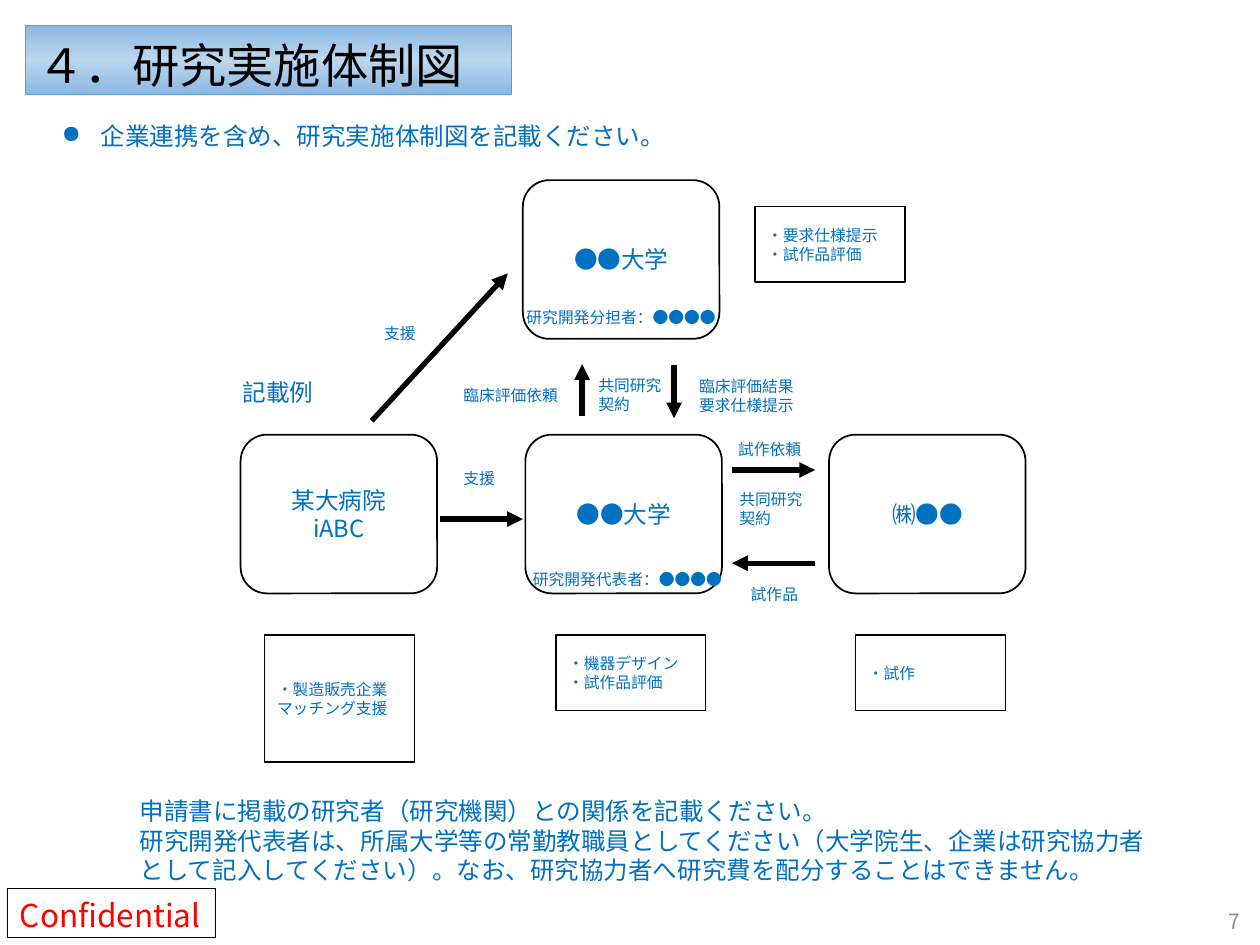
from copy import deepcopy
from lxml.etree import SubElement as Sub
from pptx import Presentation
from pptx.dml.color import RGBColor as Rgb
from pptx.enum.shapes import MSO_CONNECTOR as Conn, MSO_SHAPE as Kind
from pptx.enum.text import MSO_ANCHOR as Anchor, PP_ALIGN as Align
from pptx.oxml.ns import qn
from pptx.util import Inches as In, Pt

THEME = dict(
    font="Noto Sans CJK JP", blue="0070C0", black="000000", white="FFFFFF",
    red="FF0000", gray="8C8C8C", edge="5B9BD5", dark="8BB8E1", light="BCD6EE",
    title=27, stamp=18, body=14, node=13.5, page=12, small=9)

# Grid: node and note columns, node rows, arrow lanes (inches)
COLS = dict(aid=1.91, lead=4.17, firm=6.58, peer=4.15)
ROWS = dict(top=1.43, mid=3.45)
NODE = (1.56, 1.26)
NOTE_W, NOTE_H, NOTE_Y = 1.19, 0.6, 5.04
LANE = (5.81, 6.47)

# Content
TITLE = "４．研究実施体制図"
LEAD = "企業連携を含め、研究実施体制図を記載ください。"
NODES = [
    ("firm", "mid", ["㈱●●"]),
    ("lead", "mid", ["●●大学"]),
    ("aid", "mid", ["某大病院", "iABC"]),
    ("peer", "top", ["●●大学"]),
]
NOTES = [  # left, top, height, lines
    (2.1, NOTE_Y, 1.01, ["・製造販売企業マッチング支援"]),
    (4.41, NOTE_Y, NOTE_H, ["・機器デザイン", "・試作品評価"]),
    (6.79, NOTE_Y, NOTE_H, ["・試作"]),
    (5.99, 1.64, NOTE_H, ["・要求仕様提示", "・試作品評価"]),
]
LABELS = [  # left, top, width, lines
    (4.13, 4.47, 1.72, ["研究開発代表者：●●●●"]),
    (4.08, 2.39, 1.72, ["研究開発分担者：●●●●"]),
    (5.76, 3.44, 0.71, ["試作依頼"]),
    (5.77, 3.84, 0.71, ["共同研究", "契約"]),
    (5.86, 4.59, 0.58, ["試作品"]),
    (3.58, 3.67, 0.45, ["支援"]),
    (2.95, 2.52, 0.45, ["支援"]),
    (3.58, 3.01, 0.96, ["臨床評価依頼"]),
    (4.65, 2.93, 0.71, ["共同研究", "契約"]),
    (5.45, 2.94, 0.96, ["臨床評価結果", "要求仕様提示"]),
]
ARROWS = [  # from x, y, to x, y
    (LANE[0], 3.73, LANE[1], 3.73),
    (LANE[1], 4.47, LANE[0], 4.47),
    (3.49, 4.12, 4.15, 4.12),
    (4.62, 3.3, 4.62, 2.89),
    (5.35, 2.9, 5.35, 3.32),
    (2.95, 3.34, 4.03, 2.17),
]
GUIDE = [
    "申請書に掲載の研究者（研究機関）との関係を記載ください。",
    "研究開発代表者は、所属大学等の常勤教職員としてください（大学院生、企業は"
    "研究協力者として記入してください）。なお、研究協力者へ研究費を配分すること"
    "はできません。",
]


def tint(key):
    return Rgb.from_string(THEME[key])


def write(shape, lines, size, color="blue", align=Align.LEFT,
          anchor=Anchor.MIDDLE, wrap=True, pad=None):
    frame = shape.text_frame
    frame.word_wrap, frame.vertical_anchor = wrap, anchor
    if pad:
        frame.margin_top, frame.margin_bottom = map(In, pad)
    frame.text = "\n".join(lines)
    for para in frame.paragraphs:
        para.alignment = align
        font = para.font
        font.size, font.name = Pt(THEME[size]), THEME["font"]
        font.color.rgb = tint(color)
        Sub(font._element, qn("a:ea"), typeface=THEME["font"])
    return shape


def box(slide, kind, area, line="black", width=1, fill="white"):
    shape = slide.shapes.add_shape(kind, *map(In, area))
    shape.shadow.inherit = False
    shape.line.color.rgb, shape.line.width = tint(line), Pt(width)
    if fill:
        shape.fill.solid()
        shape.fill.fore_color.rgb = tint(fill)
    else:
        shape.fill.background()
    return shape


def text(slide, area, lines, size, **opts):
    opts = dict(anchor=Anchor.TOP) | opts
    return write(slide.shapes.add_textbox(*map(In, area)), lines, size, **opts)


def arrow(slide, ends):
    line = slide.shapes.add_connector(Conn.STRAIGHT, *map(In, ends))
    line.line.color.rgb, line.line.width = tint("black"), Pt(3)
    Sub(line.line._get_or_add_ln(), qn("a:tailEnd"), type="triangle")
    Sub(line._element.spPr, qn("a:effectLst"))


def shade(shape):
    """Fill with a band that is light across the middle."""
    fill = shape.fill
    fill.gradient()
    fill.gradient_angle = 90
    for stop, key, pos in zip(fill.gradient_stops, ("dark", "light"), (0, 0.5)):
        stop.color.rgb, stop.position = tint(key), pos
    stops = shape._element.spPr.find(".//" + qn("a:gsLst"))
    last = deepcopy(stops[0])
    last.set("pos", "100000")
    stops.append(last)


def bullet(para, mark, indent):
    props = para._p.get_or_add_pPr()
    props.set("marL", str(In(indent)))
    props.set("indent", str(-In(indent)))
    char = props.makeelement(qn("a:buChar"), {"char": mark})
    props.insert(0, char)


def main():
    deck = Presentation()
    deck.slide_width, deck.slide_height = In(10), In(7.5)
    slide = deck.slides.add_slide(deck.slide_layouts[6])

    # Stamp, title and lead line
    stamp = box(slide, Kind.RECTANGLE, (0.06, 7.05, 1.65, 0.39), width=0.5, fill=None)
    write(stamp, ["Confidential"], "stamp", "red", wrap=False, pad=(0.08, 0.04))
    head = box(slide, Kind.RECTANGLE, (0.2, 0.2, 3.86, 0.55), "edge", 0.5)
    shade(head)
    write(head, [TITLE], "title", "black", pad=(0.12, 0.04))
    lead = text(slide, (0.39, 0.91, 9.43, 0.34), [LEAD], "body")
    bullet(lead.text_frame.paragraphs[0], "●", 0.31)

    # Diagram
    for col, row, lines in NODES:
        node = box(slide, Kind.ROUNDED_RECTANGLE, (COLS[col], ROWS[row], *NODE))
        write(node, lines, "node", align=Align.CENTER)
    for left, top, high, lines in NOTES:
        note = box(slide, Kind.RECTANGLE, (left, top, NOTE_W, high))
        write(note, lines, "small")
    for ends in ARROWS:
        arrow(slide, ends)
    for left, top, wide, lines in LABELS:
        high = 0.1 + 0.15 * len(lines)
        text(slide, (left, top, wide, high), lines, "small", wrap=False)
    text(slide, (1.83, 2.95, 0.77, 0.33), ["記載例"], "node", wrap=False)

    # Guidance and page number
    text(slide, (1.01, 6.27, 8.19, 1.04), GUIDE, "body")
    text(slide, (9.47, 7.17, 0.47, 0.28), ["7"], "page", color="gray",
         align=Align.RIGHT, anchor=Anchor.MIDDLE)
    deck.save("out.pptx")


if __name__ == "__main__":
    main()
